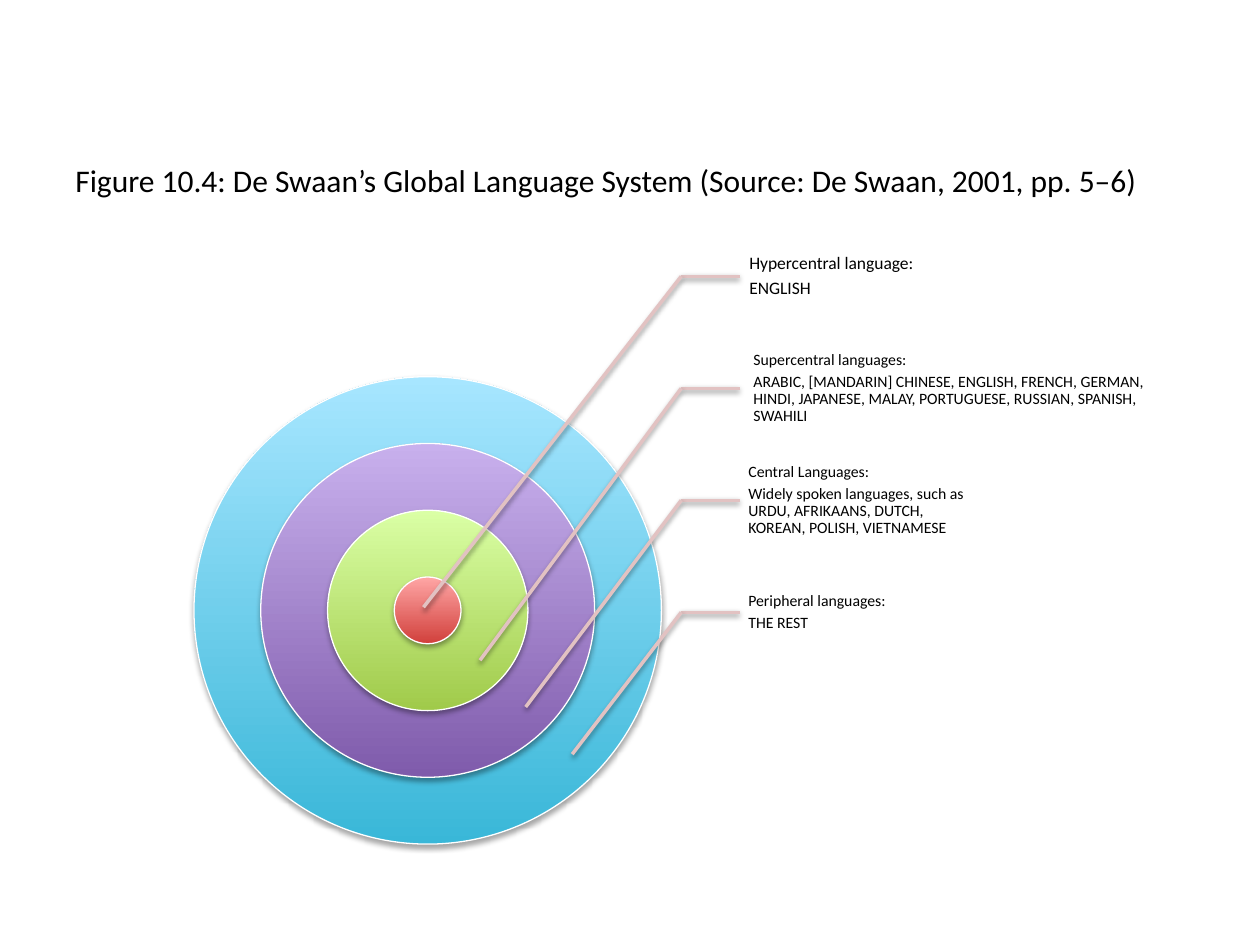
from pptx import Presentation
from pptx.dml.color import RGBColor
from pptx.enum import shapes, text
from pptx.oxml import parse_xml
from pptx.oxml.ns import nsdecls
from pptx.util import Pt

TITLE = "Figure 10.4: De Swaan’s Global Language System (Source: De Swaan, 2001, pp. 5–6)"
FONT = "Calibri"
LEADER_COLOR = "E2C2C2"

# Outermost first: diameter in units of the core, bottom color, top color
RINGS = [
    (7, "39B7D8", "A7E6FF"),
    (5, "7F5BAB", "C8B0ED"),
    (3, "A0CA4A", "DAFFA5"),
    (1, "D1403C", "FFA6A5"),
]
# Heading, languages, text size, label box (left, width, height), leader's end in its ring
LEVELS = [
    ("Hypercentral language:", "ENGLISH", 10, (422.6, 134, 64), (242, 347)),
    ("Supercentral languages:",
     "ARABIC, [MANDARIN] CHINESE, ENGLISH, FRENCH, GERMAN, HINDI, JAPANESE, "
     "MALAY, PORTUGUESE, RUSSIAN, SPANISH, SWAHILI",
     9, (425.5, 240, 98), (274.3, 377.3)),
    ("Central Languages:",
     "Widely spoken languages, such as URDU, AFRIKAANS, DUTCH, KOREAN, POLISH, VIETNAMESE",
     9, (422.6, 134, 64), (300.4, 404)),
    ("Peripheral languages:", "THE REST", 9, (422.6, 134, 64), (327, 431)),
]
CENTER_X, CENTER_Y, CORE = 244.4, 348.8, 38.16
FIRST_LEVEL_Y, LEVEL_STEP = 157.9, 64
ELBOW_X, LABEL_X = 389.3, 422.6


def color(value):
    return RGBColor.from_string(value)


def add_shadow(shape, opacity, distance):
    """Give the shape a soft black shadow straight below it."""
    shape._element.spPr.append(parse_xml(
        f'<a:effectLst {nsdecls("a")}>'
        f'<a:outerShdw blurRad="{Pt(3.1)}" dist="{Pt(distance)}" dir="5400000" rotWithShape="0">'
        f'<a:srgbClr val="000000"><a:alpha val="{opacity * 1000}"/></a:srgbClr>'
        '</a:outerShdw></a:effectLst>'))


def add_ring(slide, units, bottom_color, top_color):
    size = units * CORE
    ring = slide.shapes.add_shape(
        shapes.MSO_SHAPE.OVAL, Pt(CENTER_X - size / 2), Pt(CENTER_Y - size / 2),
        Pt(size), Pt(size))
    ring.fill.gradient()
    ring.fill.gradient_angle = 90
    for stop, value in zip(ring.fill.gradient_stops, (bottom_color, top_color)):
        stop.color.rgb = color(value)
    ring.line.color.rgb = color("FFFFFF")
    ring.line.width = Pt(0.75)
    add_shadow(ring, 35, 1.8)


def add_leader(slide, start, end):
    leader = slide.shapes.add_connector(
        shapes.MSO_CONNECTOR.STRAIGHT, *(Pt(value) for value in (*start, *end)))
    leader.line.color.rgb = color(LEADER_COLOR)
    leader.line.width = Pt(2)
    add_shadow(leader, 38, 1.6)


def add_text(slide, box, content, size):
    """Add a vertically centered text box and return its frame."""
    frame = slide.shapes.add_textbox(*(Pt(value) for value in box)).text_frame
    frame.word_wrap = True
    frame.vertical_anchor = text.MSO_ANCHOR.MIDDLE
    frame.text = content
    for paragraph in frame.paragraphs:
        paragraph.alignment = text.PP_ALIGN.LEFT
        for run in paragraph.runs:
            run.font.name = FONT
            run.font.size = Pt(size)
            run.font.color.rgb = color("000000")
    return frame


def add_label(slide, heading, languages, size, box, middle):
    left, width, height = box
    frame = add_text(slide, (left, middle - height / 2, width, height),
                     f"{heading}\n{languages}", size)
    frame.margin_left = Pt(size * 0.56)
    frame.margin_top = frame.margin_right = frame.margin_bottom = Pt(0.7)
    for paragraph in frame.paragraphs:
        paragraph.line_spacing = 0.9
        paragraph.space_after = Pt(size * 0.35)


def main():
    presentation = Presentation()
    presentation.slide_width, presentation.slide_height = Pt(720), Pt(540)
    slide = presentation.slides.add_slide(presentation.slide_layouts[6])
    add_text(slide, (36, 80.6, 648, 44.6), TITLE, 18)
    for ring in RINGS:
        add_ring(slide, *ring)
    for index, (heading, languages, size, box, target) in enumerate(LEVELS):
        middle = FIRST_LEVEL_Y + index * LEVEL_STEP
        add_label(slide, heading, languages, size, box, middle)
        add_leader(slide, (ELBOW_X, middle), (LABEL_X, middle))
        add_leader(slide, (ELBOW_X, middle), target)
    presentation.save("out.pptx")


if __name__ == "__main__":
    main()
